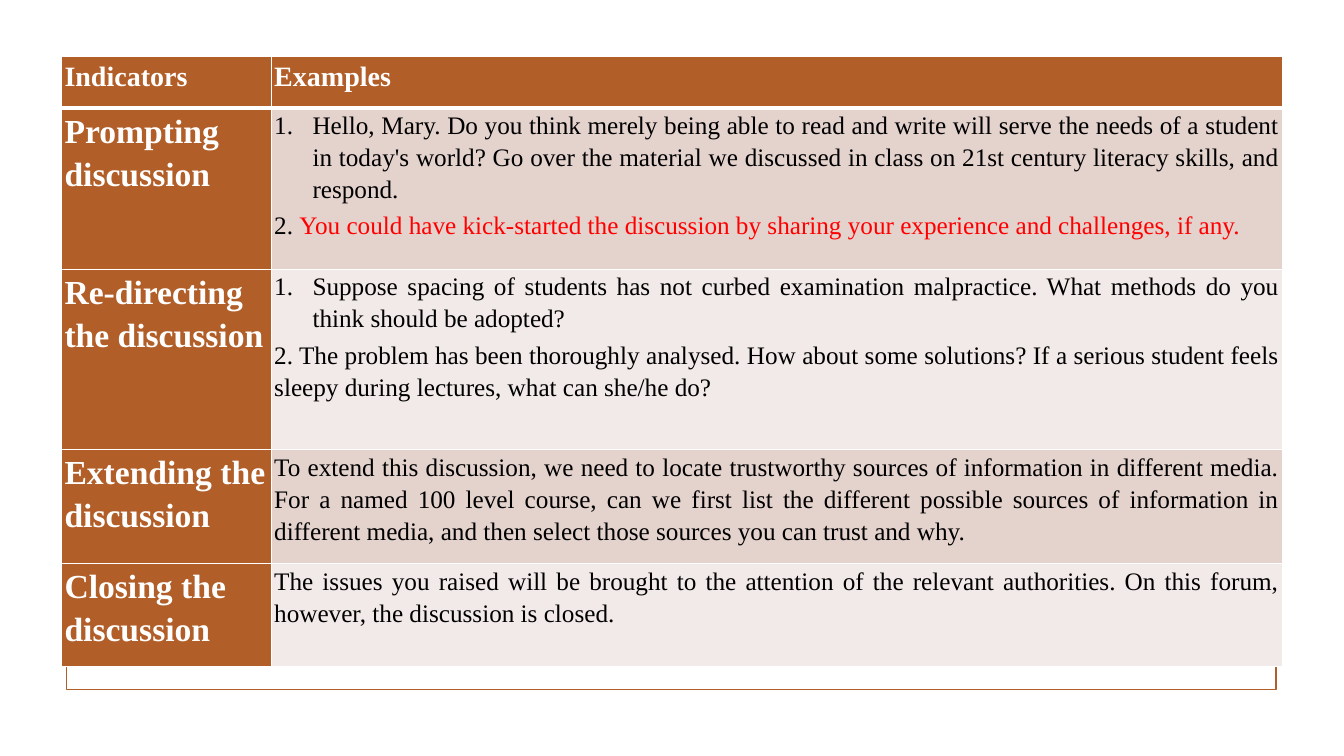
from lxml import etree
from pptx import Presentation
from pptx import util as u
from pptx.dml.color import RGBColor
from pptx.enum import shapes, text
from pptx.oxml import ns

RUST = RGBColor(0xB1, 0x5E, 0x28)
WHITE = RGBColor(0xFF, 0xFF, 0xFF)
BLACK = RGBColor(0, 0, 0)
RED = RGBColor(0xFF, 0, 0)
BANDS = RGBColor(0xE4, 0xD2, 0xCD), RGBColor(0xF2, 0xEA, 0xE8)

# Table grid in inches
LEFT, TOP = 0.61, 0.56
COLS = 2.08, 10.03
ROWS = 0.51, 1.6, 1.79, 1.13, 1.02

HEADER = {"size": u.Pt(20), "bold": True, "color": WHITE}
LABEL = {"size": u.Pt(24), "bold": True, "color": WHITE}
BODY = {"size": u.Pt(18), "bold": False, "color": BLACK}
ALERT = {**BODY, "color": RED}

# Indicator, then paragraphs as (numbered, runs)
CONTENT = [
    ("Prompting discussion", [
        (True, [("Hello, Mary. Do you think merely being able to read and write will "
                 "serve the needs of a student in today's world? Go over the material we "
                 "discussed in class on 21st century literacy skills, and respond.", BODY)]),
        (False, [("2. ", BODY),
                 ("You could have kick-started the discussion by sharing your "
                  "experience and challenges, if any.", ALERT)]),
    ]),
    ("Re-directing the discussion", [
        (True, [("Suppose spacing of students has not curbed examination malpractice. "
                 "What methods do you think should be adopted?", BODY)]),
        (False, [("2. The problem has been thoroughly analysed. How about some solutions? "
                  "If a serious student feels sleepy during lectures, what can she/he do?",
                  BODY)]),
    ]),
    ("Extending the discussion", [
        (False, [("To extend this discussion, we need to locate trustworthy sources of "
                  "information in different media. For a named 100 level course, can we "
                  "first list the different possible sources of information in different "
                  "media, and then select those sources you can trust and why.", BODY)]),
    ]),
    ("Closing the discussion", [
        (False, [("The issues you raised will be brought to the attention of the relevant "
                  "authorities. On this forum, however, the discussion is closed.", BODY)]),
    ]),
]


def add_frame(slide):
    sp = slide.shapes.add_shape(shapes.MSO_SHAPE.RECTANGLE, u.Inches(0.66),
                                u.Inches(0.67), u.Inches(12), u.Inches(6.17))
    sp.shadow.inherit = False
    sp.fill.background()
    sp.line.color.rgb = RUST
    sp.line.width = u.Pt(1.25)


def set_borders(cell, top=1, bottom=1):
    tc_pr = cell._tc.get_or_add_tcPr()
    for side, width in zip("LRTB", (1, 1, top, bottom)):
        ln = etree.SubElement(tc_pr, ns.qn(f"a:ln{side}"), w=str(u.Pt(width)))
        fill = etree.SubElement(ln, ns.qn("a:solidFill"))
        etree.SubElement(fill, ns.qn("a:srgbClr"), val=str(WHITE))


def number_paragraph(p):
    p_pr = p._p.get_or_add_pPr()
    p_pr.set("marL", str(u.Inches(0.38)))
    p_pr.set("indent", str(-u.Inches(0.38)))
    etree.SubElement(p_pr, ns.qn("a:buAutoNum"), type="arabicPeriod")


def add_run(p, words, style):
    r = p.add_run()
    r.text = words
    r.font.name = "Times New Roman"
    r.font.color.rgb = style["color"]
    for name in ("size", "bold"):
        setattr(r.font, name, style[name])


def fill_cell(cell, paragraphs, fill, align, **borders):
    margins = {"margin_left": 0.03, "margin_right": 0.03,
               "margin_top": 0, "margin_bottom": 0}
    for name, value in margins.items():
        setattr(cell, name, u.Inches(value))
    set_borders(cell, **borders)
    cell.fill.solid()
    cell.fill.fore_color.rgb = fill
    tf = cell.text_frame
    for i, (numbered, runs) in enumerate(paragraphs):
        p = tf.add_paragraph() if i else tf.paragraphs[0]
        if numbered:
            number_paragraph(p)
        layout = {"alignment": align, "line_spacing": 1.15, "space_after": u.Pt(3)}
        for name, value in layout.items():
            setattr(p, name, value)
        for words, style in runs:
            add_run(p, words, style)


def add_indicator_table(slide):
    table = slide.shapes.add_table(len(ROWS), len(COLS), u.Inches(LEFT), u.Inches(TOP),
                                   u.Inches(sum(COLS)), u.Inches(sum(ROWS))).table
    for col, width in zip(table.columns, COLS):
        col.width = u.Inches(width)
    for row, height in zip(table.rows, ROWS):
        row.height = u.Inches(height)

    left, justify = text.PP_ALIGN.LEFT, text.PP_ALIGN.JUSTIFY
    # Header row
    for c, (title, align) in enumerate([("Indicators", left), ("Examples", justify)]):
        fill_cell(table.cell(0, c), [(False, [(title, HEADER)])], RUST, align, bottom=3)
    # Indicator rows with alternating bands
    for r, (label, examples) in enumerate(CONTENT, 1):
        top = 3 if r == 1 else 1
        fill_cell(table.cell(r, 0), [(False, [(label, LABEL)])], RUST, left, top=top)
        fill_cell(table.cell(r, 1), examples, BANDS[(r - 1) % 2], justify, top=top)


def main():
    prs = Presentation()
    prs.slide_width, prs.slide_height = u.Inches(13.33), u.Inches(7.5)
    slide = prs.slides.add_slide(prs.slide_layouts[6])
    add_frame(slide)
    add_indicator_table(slide)
    prs.save("out.pptx")


if __name__ == "__main__":
    main()
